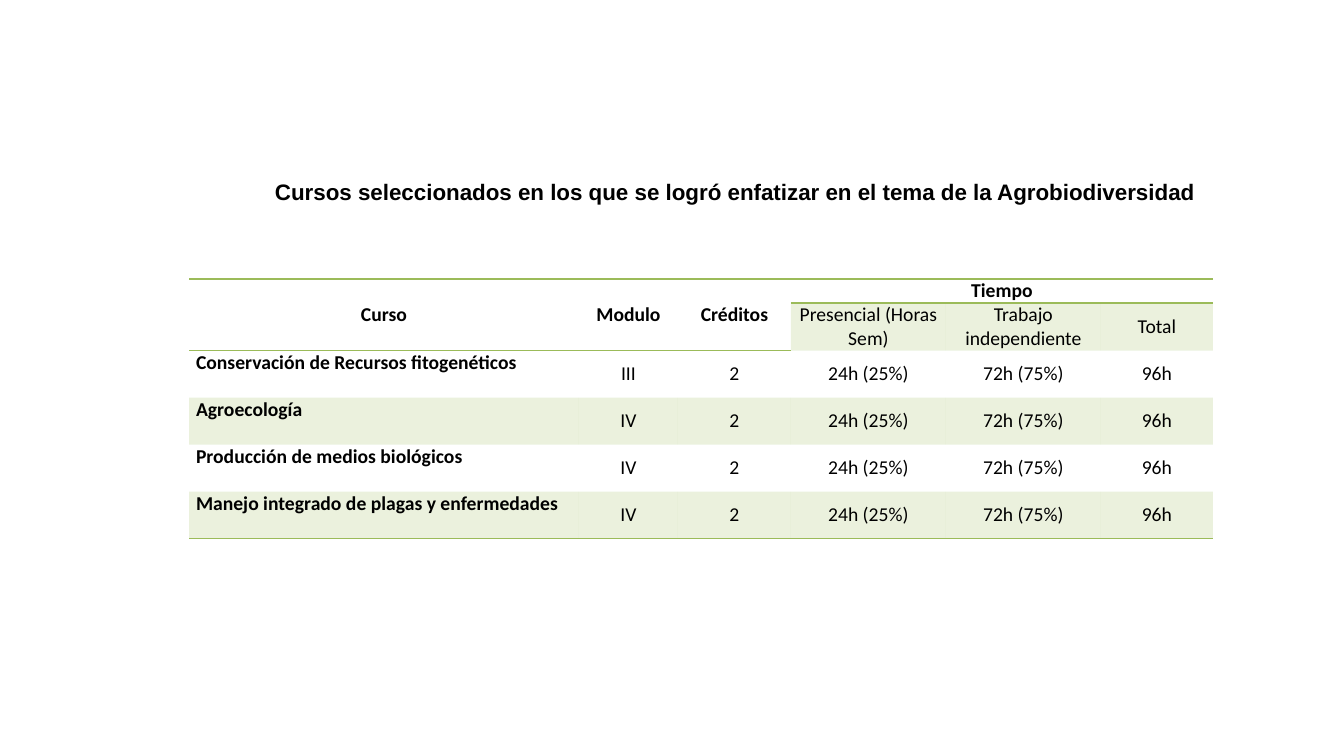
"""Build the slide listing the courses that emphasise agrobiodiversity."""
from lxml.etree import SubElement
from pptx import Presentation
from pptx.dml.color import RGBColor
from pptx.enum.text import MSO_ANCHOR as Anchor, PP_ALIGN as Align
from pptx.oxml import parse_xml
from pptx.oxml.ns import nsdecls, qn
from pptx.util import Emu, Pt

GREEN = "9BBB59"
BLACK = "000000"
NO_STYLE = "{2D5ABB26-0587-4C30-8999-92F81FD0307C}"


def px(count):
    return Emu(round(count * 914400 / 100.8))


def color(code):
    return RGBColor.from_string(code)


presentation = Presentation()
presentation.slide_width = px(1344)
presentation.slide_height = px(756)
slide = presentation.slides.add_slide(presentation.slide_layouts[6])

column_widths = [390, 99, 113, 155, 155, 112]
row_heights = [24, 47, 47, 47, 47, 47]
hours = ["24h (25%)", "72h (75%)", "96h"]
rows = [
    ["Curso", "Modulo", "Créditos", "Tiempo", "", ""],
    ["", "", "", "Presencial (Horas Sem)", "Trabajo independiente", "Total"],
    ["Conservación de Recursos fitogenéticos", "III", "2", *hours],
    ["Agroecología", "IV", "2", *hours],
    ["Producción de medios biológicos", "IV", "2", *hours],
    ["Manejo integrado de plagas y enfermedades", "IV", "2", *hours],
]
table = slide.shapes.add_table(
    len(rows), len(column_widths), px(189), px(279), px(sum(column_widths)), px(sum(row_heights))
).table
table.first_row = False
table.horz_banding = False
table._tbl.tblPr.find(qn("a:tableStyleId")).text = NO_STYLE
for column, width in zip(table.columns, column_widths):
    column.width = px(width)
for row, height in zip(table.rows, row_heights):
    row.height = px(height)
for column_index in range(3):
    table.cell(0, column_index).merge(table.cell(1, column_index))
table.cell(0, 3).merge(table.cell(0, 5))

for row_index, texts in enumerate(rows):
    for column_index, text in enumerate(texts):
        cell = table.cell(row_index, column_index)
        course = row_index > 1 and column_index == 0
        time_heading = row_index == 0 and column_index >= 3
        cell.margin_left = cell.margin_right = px(7)
        cell.margin_top = cell.margin_bottom = 0
        cell.vertical_anchor = Anchor.TOP if course or time_heading else Anchor.MIDDLE
        cell.text = text
        paragraph = cell.text_frame.paragraphs[0]
        paragraph.alignment = Align.JUSTIFY if course else Align.CENTER
        paragraph.font.name = "Calibri"
        paragraph.font.size = Pt(14)
        paragraph.font.bold = row_index == 0 or course
        paragraph.font.color.rgb = color(BLACK)

        properties = cell._tc.get_or_add_tcPr()
        if row_index in (3, 5) or (row_index == 1 and column_index >= 3):
            cell.fill.solid()
            cell.fill.fore_color.rgb = color(GREEN)
            SubElement(properties.find(".//" + qn("a:srgbClr")), qn("a:alpha"), val="20000")
        else:
            cell.fill.background()

        edges = []
        if row_index in (0, 5) or (row_index == 1 and column_index < 3):
            edges.append("lnB")
        if row_index == 0:
            edges.append("lnT")
        for edge in edges:
            properties.insert(0, parse_xml(
                f'<a:{edge} {nsdecls("a")} w="12700"><a:solidFill>'
                f'<a:srgbClr val="{GREEN}"/></a:solidFill></a:{edge}>'
            ))

title = slide.shapes.add_textbox(px(265), px(171), px(959), px(67))
title.text_frame.word_wrap = False
title.text_frame.vertical_anchor = Anchor.TOP
title.text_frame.margin_top = px(7)
paragraph = title.text_frame.paragraphs[0]
paragraph.text = "Cursos seleccionados en los que se logró enfatizar en el tema de la Agrobiodiversidad"
paragraph.font.name = "Arial"
paragraph.font.size = Pt(16)
paragraph.font.bold = True
paragraph.font.color.rgb = color(BLACK)

presentation.save("out.pptx")
